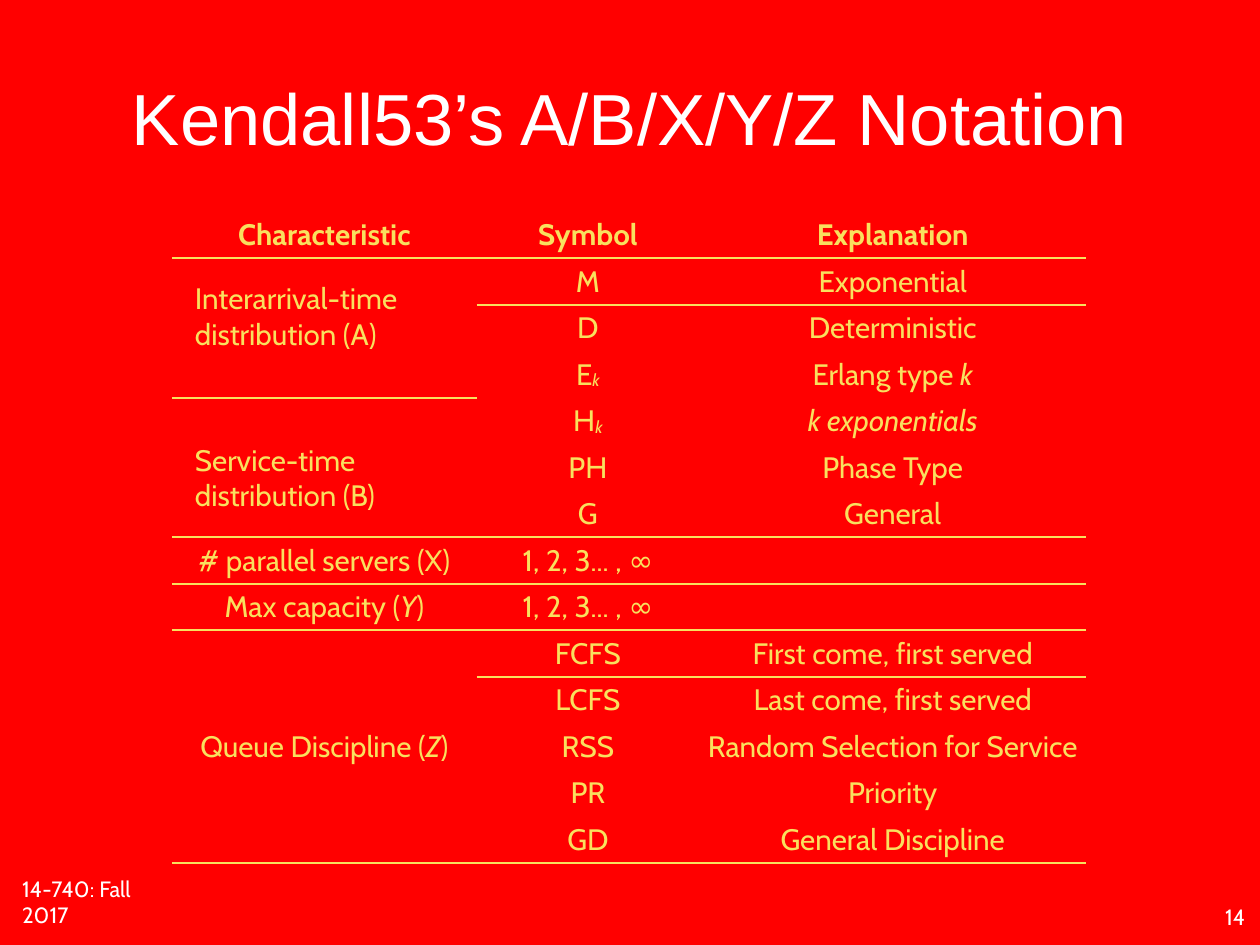
from lxml import etree
from pptx import Presentation
from pptx import util as u
from pptx.dml.color import RGBColor
from pptx.enum import text
from pptx.oxml.ns import qn

RED = RGBColor(0xFF, 0x00, 0x00)
WHITE = RGBColor(0xFF, 0xFF, 0xFF)
GOLD = RGBColor(0xF9, 0xE0, 0x5E)
PX = 9144  # 100 px to the inch
PAD = 6
PLAIN = "{2D5ABB26-0587-4C30-8999-92F81FD0307C}"  # no style, no grid
MID, LOW, TOP = (text.MSO_ANCHOR.MIDDLE, text.MSO_ANCHOR.BOTTOM,
                 text.MSO_ANCHOR.TOP)
LEFT, MIDST = text.PP_ALIGN.LEFT, text.PP_ALIGN.CENTER

# Text between stars is italic; a leading underscore lowers it
ROWS = [
    ("Characteristic", "Symbol", "Explanation"),
    ("Interarrival-time distribution (A)", "M", "Exponential"),
    ("", "D", "Deterministic"),
    ("", "E*_k*", "Erlang type *k*"),
    ("Service-time distribution (B)", "H*_k*", "*k exponentials*"),
    ("", "PH", "Phase Type"),
    ("", "G", "General"),
    ("# parallel servers (X)", "1, 2, 3... , ∞", ""),
    ("Max capacity (*Y*)", "1, 2, 3... , ∞", ""),
    ("Queue Discipline (*Z*)", "FCFS", "First come, first served"),
    ("", "LCFS", "Last come, first served"),
    ("", "RSS", "Random Selection for Service"),
    ("", "PR", "Priority"),
    ("", "GD", "General Discipline"),
]
SPANS = {1: 3, 4: 6, 9: 13}  # first and last row of merged labels
RULED = {0, 6, 7, 8, 13}     # rows with a line below
SIDE = {1: TOP, 4: LOW}      # left-aligned labels and their anchors


def write(para, words, size=24, font="Cabin", color=GOLD, bold=False,
          align=MIDST):
    para.alignment = align
    for i, part in enumerate(words.split("*")):
        if not part:
            continue
        run = para.add_run()
        run.text = part.lstrip("_")
        face = run.font
        face.name, face.size = font, u.Pt(size)
        face.bold, face.italic = bold, i % 2 == 1
        face.color.rgb = color
        if part.startswith("_"):
            run._r.get_or_add_rPr().set("baseline", "-6000")


def pad(item, gap):
    item.margin_left = item.margin_right = u.Emu(gap * PX)
    item.margin_top = item.margin_bottom = u.Emu(gap * PX)


def rule(cell, tag, pos):
    line = etree.Element(qn("a:" + tag), w=str(u.Pt(2)))
    fill = etree.SubElement(line, qn("a:solidFill"))
    etree.SubElement(fill, qn("a:srgbClr"), val=str(GOLD))
    cell._tc.get_or_add_tcPr().insert(pos, line)


class Deck:
    def __init__(self, wide, high):
        self.file = Presentation()
        self.file.slide_width = u.Emu(wide * PX)
        self.file.slide_height = u.Emu(high * PX)
        self.slide = self.file.slides.add_slide(self.file.slide_layouts[5])
        fill = self.slide.background.fill
        fill.solid()
        fill.fore_color.rgb = RED

    def place(self, *box):
        return [u.Emu(n * PX) for n in box]

    def frame(self, shape, words, anchor, wrap=True, **form):
        body = shape.text_frame
        body.auto_size = text.MSO_AUTO_SIZE.NONE
        body.word_wrap = wrap
        body.vertical_anchor = anchor
        pad(body, PAD)
        write(body.paragraphs[0], words, color=WHITE, **form)

    def title(self, words, box):
        head = self.slide.shapes.title
        head.left, head.top, head.width, head.height = self.place(*box)
        self.frame(head, words, MID, size=58.8, font="Arial")

    def label(self, words, box, anchor, **form):
        shape = self.slide.shapes.add_textbox(*self.place(*box))
        self.frame(shape, words, anchor, size=18, **form)

    def table(self, box, cols):
        shape = self.slide.shapes.add_table(len(ROWS), len(cols),
                                            *self.place(*box))
        grid = shape.table
        grid.first_row = grid.horz_banding = False
        grid._tbl.tblPr.find(qn("a:tableStyleId")).text = PLAIN
        for col, wide in zip(grid.columns, cols):
            col.width = u.Emu(wide * PX)
        for row in grid.rows:
            row.height = u.Emu(box[3] * PX // len(ROWS))
        for first, last in SPANS.items():
            grid.cell(first, 0).merge(grid.cell(last, 0))
        for r, row in enumerate(ROWS):
            for c, words in enumerate(row):
                self.cell(grid.cell(r, c), r, c, words)

    def cell(self, cell, r, c, words):
        side = c == 0 and r in SIDE
        pad(cell, 26 if side else PAD)
        cell.vertical_anchor = SIDE[r] if side else MID
        cell.fill.background()
        write(cell.text_frame.paragraphs[0], words, bold=r == 0,
              align=LEFT if side else MIDST)
        # Lines above and below, across merged rows
        last = SPANS.get(r, r) if c == 0 else r
        if last in RULED:
            rule(cell, "lnB", 0)
        if r - 1 in RULED:
            rule(cell, "lnT", 0)


def main():
    deck = Deck(1422, 1067)
    # Heading
    deck.title("Kendall53’s A/B/X/Y/Z Notation", (139, 28, 1144, 208))
    # Notation table
    deck.table((194, 239, 1032, 722), (344, 251, 437))
    # Footer and page number
    deck.label("14-740: Fall 2017", (19, 1014, 183, 40), LOW, align=LEFT)
    deck.label("14", (1375, 1014, 38, 40), TOP, wrap=False)
    deck.file.save("out.pptx")


if __name__ == "__main__":
    main()
